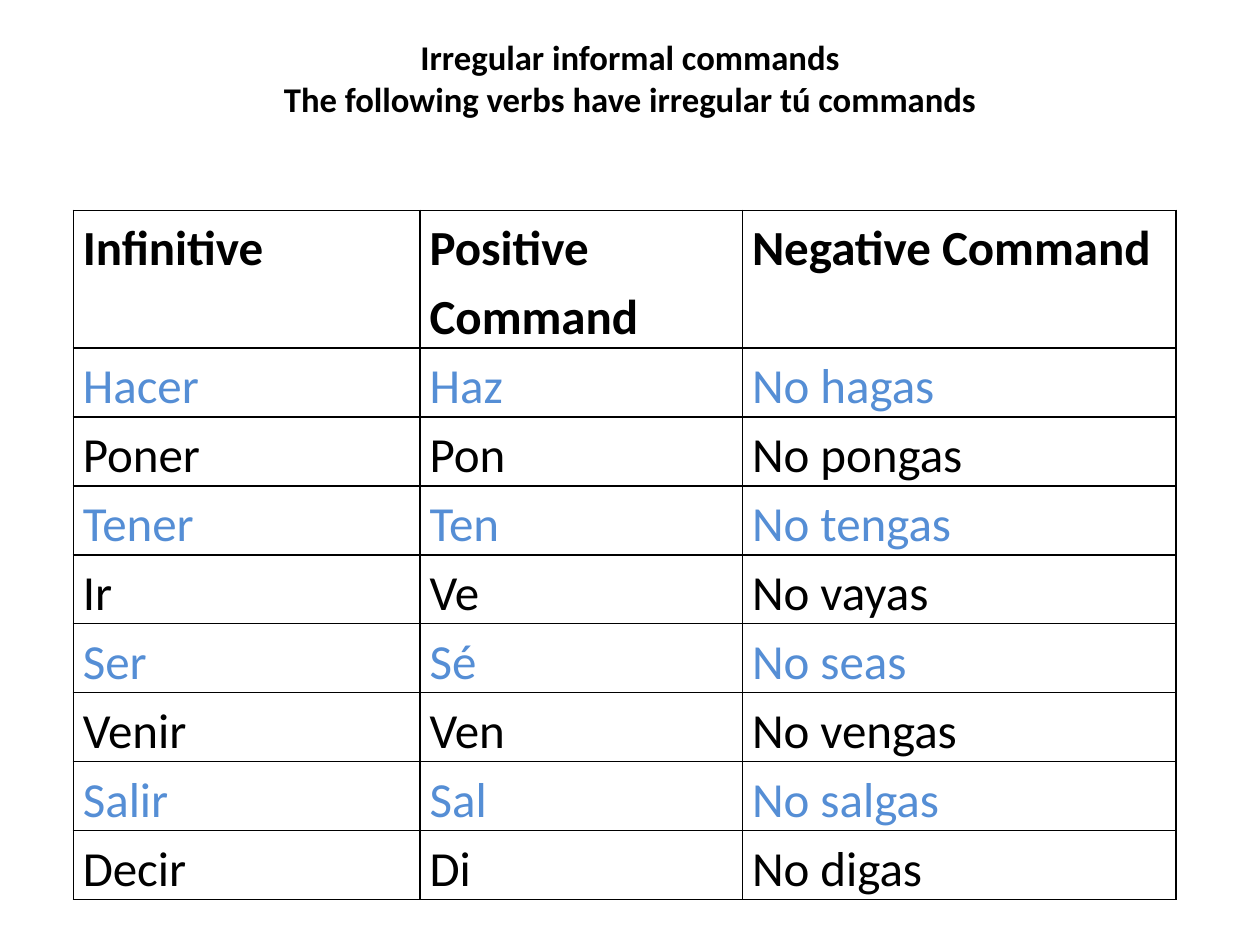
from lxml import etree
from pptx import Presentation
from pptx.dml.color import RGBColor
from pptx.enum.text import MSO_ANCHOR, MSO_AUTO_SIZE, PP_ALIGN
from pptx.oxml.ns import qn
from pptx.util import Cm, Pt

MID = MSO_ANCHOR.MIDDLE
NO_FIT = MSO_AUTO_SIZE.NONE
CENTER = PP_ALIGN.CENTER
BLACK, BLUE = "000000", "558ED5"


def style(font, size, tint, bold):
    font.name = "Calibri"
    font.size = Pt(size)
    font.bold = bold
    font.color.rgb = RGBColor.from_string(tint)


def border(cell):
    props = cell._tc.get_or_add_tcPr()
    for i, side in enumerate(("lnL", "lnR", "lnT", "lnB")):
        line = etree.Element(qn("a:" + side), w=str(Pt(1)))
        fill = etree.SubElement(line, qn("a:solidFill"))
        etree.SubElement(fill, qn("a:srgbClr"), val=BLACK)
        props.insert(i, line)


deck = Presentation()
deck.slide_width, deck.slide_height = Cm(25.4), Cm(19.05)
slide = deck.slides.add_slide(deck.slide_layouts[5])

# Title, held in the upper part of its box
title = slide.shapes.title
title.left, title.top = Cm(1.27), Cm(0.76)
title.width, title.height = Cm(22.86), Cm(3.18)
frame = title.text_frame
frame.auto_size = NO_FIT
frame.vertical_anchor = MID
frame.margin_top, frame.margin_bottom = Cm(0), Cm(1.57)
para = frame.paragraphs[0]
para.alignment = CENTER
lines = ("Irregular informal commands",
         "The following verbs have irregular tú commands")
for i, text in enumerate(lines):
    if i:
        para.add_line_break()
    run = para.add_run()
    run.text = text
    style(run.font, 19.8, BLACK, True)

# Verb table: bold header, then blue and black rows in turn
verbs = [
    ("Infinitive", "Positive Command", "Negative Command"),
    ("Hacer", "Haz", "No hagas"),
    ("Poner", "Pon", "No pongas"),
    ("Tener", "Ten", "No tengas"),
    ("Ir", "Ve", "No vayas"),
    ("Ser", "Sé", "No seas"),
    ("Venir", "Ven", "No vengas"),
    ("Salir", "Sal", "No salgas"),
    ("Decir", "Di", "No digas"),
]
widths = (6.99, 6.5, 8.74)
shape = slide.shapes.add_table(len(verbs), len(widths), Cm(1.48), Cm(4.24),
                               Cm(sum(widths)), Cm(13.64))
table = shape.table
for col, width in zip(table.columns, widths):
    col.width = Cm(width)
for r, words in enumerate(verbs):
    table.rows[r].height = Cm(1.27)
    for c, word in enumerate(words):
        cell = table.cell(r, c)
        cell.fill.background()
        border(cell)
        cell.margin_left = cell.margin_right = Cm(0.19)
        cell.margin_top = cell.margin_bottom = Cm(0)
        para = cell.text_frame.paragraphs[0]
        para.line_spacing = 1.15
        run = para.add_run()
        run.text = word
        style(run.font, 28, BLUE if r % 2 else BLACK, r == 0)
shape.height = Cm(13.64)

deck.save("out.pptx")
